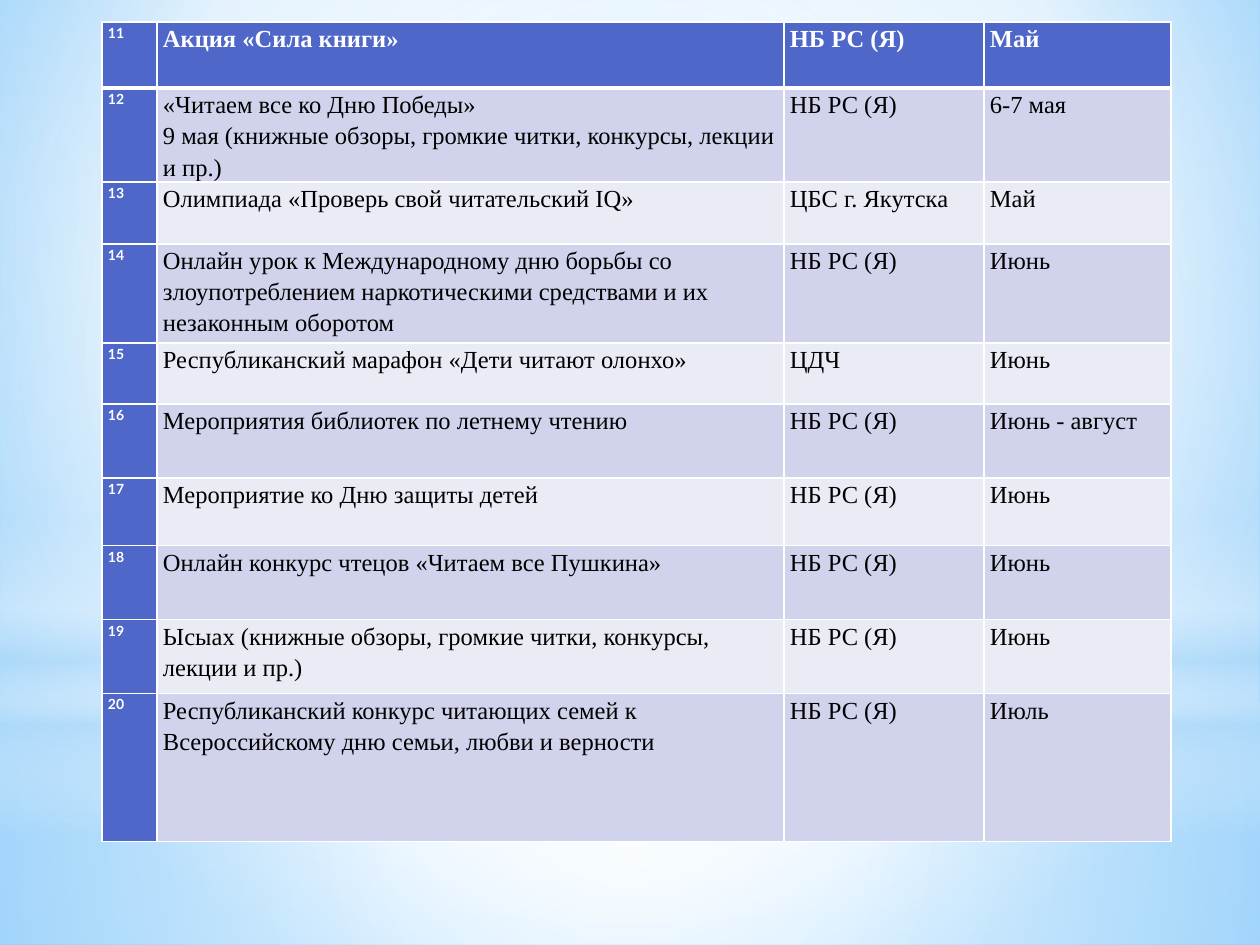
from lxml.etree import SubElement
from pptx import Presentation
from pptx.dml.color import RGBColor
from pptx.enum.shapes import MSO_SHAPE
from pptx.oxml import parse_xml
from pptx.oxml.ns import nsdecls, qn
from pptx.util import Emu, Pt

WHITE = RGBColor(0xFF, 0xFF, 0xFF)
BLACK = RGBColor(0, 0, 0)
BLUE = RGBColor(0x4E, 0x67, 0xC8)
DARK = RGBColor(0xD0, 0xD3, 0xEB)
LIGHT = RGBColor(0xE9, 0xEB, 0xF5)
SKY = RGBColor(0xB4, 0xDC, 0xFA)
PALE = RGBColor(0x9E, 0xD5, 0xFF)
DEEP = RGBColor(0x5B, 0xB9, 0xFF)

WIDTHS = [55, 627, 200, 187]
HEIGHTS = [66, 94, 62, 99, 61, 74, 68, 74, 74, 148]
HOST = "НБ РС (Я)"
EVENTS = [
    ("Акция «Сила книги»", HOST, "Май"),
    ("«Читаем все ко Дню Победы»\n9 мая (книжные обзоры, громкие читки, конкурсы, "
     "лекции и пр.)", HOST, "6-7 мая"),
    ("Олимпиада «Проверь свой читательский IQ»", "ЦБС г. Якутска", "Май"),
    ("Онлайн урок к Международному дню борьбы со злоупотреблением "
     "наркотическими средствами и их незаконным оборотом", HOST, "Июнь"),
    ("Республиканский марафон «Дети читают олонхо»", "ЦДЧ", "Июнь"),
    ("Мероприятия библиотек по летнему чтению", HOST, "Июнь - август"),
    ("Мероприятие ко Дню защиты детей", HOST, "Июнь"),
    ("Онлайн конкурс чтецов «Читаем все Пушкина»", HOST, "Июнь"),
    ("Ысыах (книжные обзоры, громкие читки, конкурсы, лекции и пр.)", HOST, "Июнь"),
    ("Республиканский конкурс читающих семей к Всероссийскому дню семьи, "
     "любви и верности", HOST, "Июль"),
]


def px(num):
    """Turn px into EMU."""
    return Emu(round(num * 914400 / 126))


def blend(fill, root, stops, rect=None):
    """Fill with a gradient: round towards rect, or downwards without one."""
    fill.solid()
    grad = parse_xml(f'<a:gradFill {nsdecls("a")} rotWithShape="1"><a:gsLst/></a:gradFill>')
    for pos, color, alpha in stops:
        stop = SubElement(grad[0], qn("a:gs"), pos=str(pos * 1000))
        tint = SubElement(stop, qn("a:srgbClr"), val=str(color))
        if alpha < 100:
            SubElement(tint, qn("a:alpha"), val=str(alpha * 1000))
    if rect:
        path = SubElement(grad, qn("a:path"), path="circle")
        sides = {side: str(part * 1000) for side, part in zip("ltrb", rect)}
        SubElement(path, qn("a:fillToRect"), **sides)
    else:
        SubElement(grad, qn("a:lin"), ang="5400000", scaled="0")
    old = next(root.iter(qn("a:solidFill")))
    old.getparent().replace(old, grad)


def glow(slide, kind, box, stops, rect=None):
    """Add one soft shape of the backdrop."""
    shape = slide.shapes.add_shape(kind, *map(px, box))
    shape.shadow.inherit = False
    blend(shape.fill, shape.element, stops, rect)
    shape.line.fill.background()


def backdrop(slide, left, top, width, height):
    """Paint the sky and its layers of light."""
    blend(slide.background.fill, slide.element,
          [(0, PALE, 100), (60, WHITE, 100), (100, DEEP, 100)], (20, 10, 20, 60))
    mid = (50, 50, 50, 50)
    split = 703
    glow(slide, MSO_SHAPE.RECTANGLE, (left, top + split, width, height - split),
         [(0, WHITE, 91), (37, WHITE, 76), (100, SKY, 79)], mid)
    glow(slide, MSO_SHAPE.RECTANGLE, (left, top, width, split),
         [(0, WHITE, 89), (48, WHITE, 62), (100, SKY, 79)], mid)
    glow(slide, MSO_SHAPE.RECTANGLE, (left, top + 519, width, 315),
         [(0, WHITE, 0), (29, WHITE, 30), (45, SKY, 40), (55, WHITE, 26),
          (65, SKY, 60), (100, WHITE, 0)])
    glow(slide, MSO_SHAPE.OVAL, (left, top + 221, width, split),
         [(0, WHITE, 100), (56, WHITE, 0)], mid)


def write(frame, text, size=14, face="Times New Roman", color=BLACK, bold=False):
    """Write text, one paragraph a line."""
    frame.text = text
    for para in frame.paragraphs:
        para.line_spacing = 1.15
        for run in para.runs:
            font = run.font
            font.size, font.name, font.bold = Pt(size), face, bold
            font.color.rgb = color


def border(cell, **sides):
    """Draw white cell borders of the given widths in points."""
    props = cell._tc.get_or_add_tcPr()
    for spot, (side, width) in enumerate(sides.items()):
        props.insert(spot, parse_xml(
            f'<a:ln{side} {nsdecls("a")} w="{Pt(width)}"><a:solidFill>'
            f'<a:srgbClr val="{WHITE}"/></a:solidFill></a:ln{side}>'))


def plan(slide, left, top, width, height):
    """Place the table of numbered events."""
    table = slide.shapes.add_table(
        len(EVENTS), len(WIDTHS), *map(px, (left, top, width, height))).table
    for col, size in zip(table.columns, WIDTHS):
        col.width = px(size)
    for row, event in enumerate(EVENTS):
        table.rows[row].height = px(HEIGHTS[row])
        for col, text in enumerate((str(row + 11), *event)):
            cell = table.cell(row, col)
            cell.margin_left = cell.margin_right = px(6)
            cell.margin_top = cell.margin_bottom = 0
            head = row == 0 or col == 0
            cell.fill.solid()
            cell.fill.fore_color.rgb = BLUE if head else DARK if row % 2 else LIGHT
            look = {"color": WHITE, "bold": True} if head else {}
            if col == 0:
                look.update(size=8, face="Lato")
            write(cell.text_frame, text, **look)
            border(cell, L=1, R=1, T=3 if row == 1 else 1, B=1 if row else 3)


def main():
    """Build the slide and save it."""
    deck = Presentation()
    deck.slide_width, deck.slide_height = px(1260), px(945)
    slide = deck.slides.add_slide(deck.slide_layouts[6])
    backdrop(slide, 0, 0, 1260, 945)
    plan(slide, 102, 22, sum(WIDTHS), sum(HEIGHTS))
    deck.save("out.pptx")


if __name__ == "__main__":
    main()
